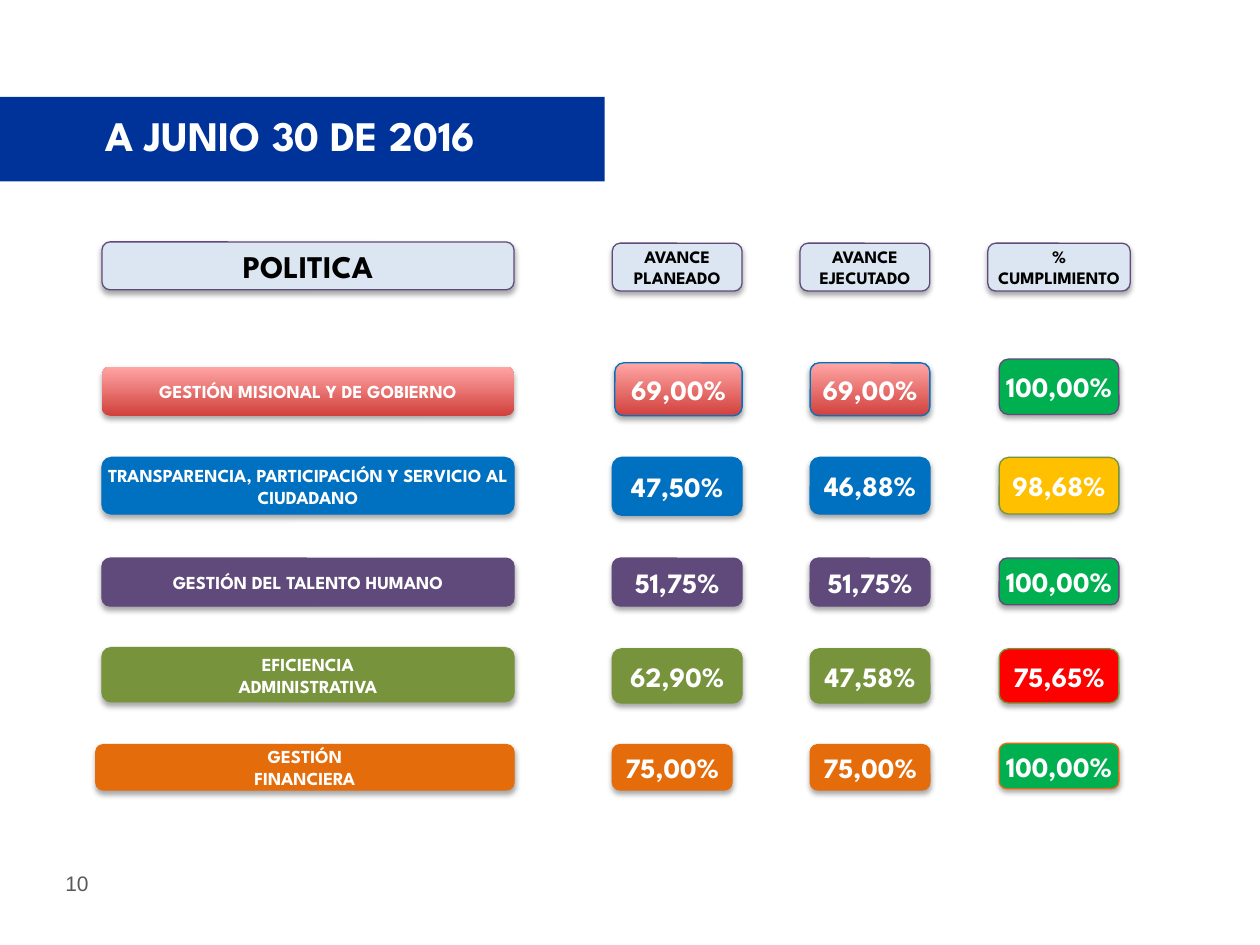
from lxml import etree
from pptx import Presentation
from pptx.dml.color import RGBColor
from pptx.enum.shapes import MSO_SHAPE as Shape
from pptx.enum.text import MSO_ANCHOR as Anchor, PP_ALIGN as Align
from pptx.oxml import parse_xml
from pptx.util import Inches, Pt

HEADING_FONT = "League Spartan"
WHITE, BLACK = "FFFFFF", "000000"
BLUE, PURPLE, GREEN, ORANGE = "0070C0", "604A7B", "77933C", "E46C0A"
RED_GRADIENT = ("D1403C", "FFA6A5")
ON_TARGET, NEAR_TARGET, BELOW_TARGET = "00B050", "FFC000", "FF0000"

SHADOW = """<a:effectLst xmlns:a="http://schemas.openxmlformats.org/drawingml/2006/main">
  <a:outerShdw blurRad="40000" dist="23000" dir="5400000" rotWithShape="0">
    <a:srgbClr val="000000"><a:alpha val="35000"/></a:srgbClr>
  </a:outerShdw>
</a:effectLst>"""

# Left and width of each column
POLICY, PLANNED, EXECUTED, COMPLIANCE = (0.81, 3.27), (4.86, 1.03), (6.43, 0.95), (7.93, 0.95)

HEADERS = [
    ("POLITICA", (0.81, 1.92, 3.27, 0.38), 18),
    ("AVANCE PLANEADO", (4.86, 1.93, 1.03, 0.38), 10),
    ("AVANCE EJECUTADO", (6.35, 1.93, 1.03, 0.38), 10),
    ("% CUMPLIMIENTO", (7.84, 1.93, 1.13, 0.38), 10),
]

# Policy lines, fill, status fill, (policy, planned, executed, compliance) outlines,
# values, and (left, top, width, height) of the four cells
ROWS = [
    (["GESTIÓN MISIONAL Y DE GOBIERNO"], RED_GRADIENT, ON_TARGET,
     (None, BLUE, BLUE, PURPLE), ("69,00%", "69,00%", "100,00%"),
     ((2.91, 0.39), (2.88, 0.42), (2.88, 0.42), (2.85, 0.44)), {1: (4.88, 1.01)}),
    (["TRANSPARENCIA, PARTICIPACIÓN Y SERVICIO AL CIUDADANO"], BLUE, NEAR_TARGET,
     (BLUE, BLUE, BLUE, GREEN), ("47,50%", "46,88%", "98,68%"),
     ((3.63, 0.45), (3.63, 0.46), (3.63, 0.45), (3.63, 0.45)), {}),
    (["GESTIÓN DEL TALENTO HUMANO"], PURPLE, ON_TARGET,
     (PURPLE,) * 4, ("51,75%", "51,75%", "100,00%"),
     ((4.43, 0.38), (4.43, 0.38), (4.43, 0.38), (4.43, 0.37)), {}),
    (["EFICIENCIA", "ADMINISTRATIVA"], GREEN, BELOW_TARGET,
     (GREEN,) * 4, ("62,90%", "47,58%", "75,65%"),
     ((5.14, 0.43), (5.15, 0.43), (5.15, 0.43), (5.15, 0.43)), {}),
    (["GESTIÓN", "FINANCIERA"], ORANGE, ON_TARGET,
     (ORANGE,) * 4, ("75,00%", "75,00%", "100,00%"),
     ((5.91, 0.36), (5.91, 0.36), (5.91, 0.36), (5.90, 0.36)),
     {0: (0.76, 3.32), 1: (4.86, 0.95)}),
]


def color(hex_string):
    return RGBColor.from_string(hex_string)


def inches(box):
    return [Inches(length) for length in box]


def write(frame, lines, size, text_color, font=HEADING_FONT, bold=True, align=Align.CENTER):
    for index, line in enumerate(lines):
        paragraph = frame.paragraphs[0] if index == 0 else frame.add_paragraph()
        paragraph.alignment = align
        run = paragraph.add_run()
        run.text = line
        run.font.name, run.font.size, run.font.bold = font, Pt(size), bold
        run.font.color.rgb = color(text_color)


def set_margins(frame, margin=0):
    frame.margin_left = frame.margin_right = Inches(margin)
    frame.margin_top = frame.margin_bottom = Inches(margin)


def paint(fill, paint_color):
    """Fill with one colour, or with a (bottom, top) gradient."""
    if isinstance(paint_color, str):
        fill.solid()
        fill.fore_color.rgb = color(paint_color)
        return
    fill.gradient()
    fill.gradient_angle = 90
    for stop, position, stop_color in zip(fill.gradient_stops, (0, 1), paint_color):
        stop.position = position
        stop.color.rgb = color(stop_color)


def add_pill(slide, box, lines, size, fill, outline, text_color=WHITE):
    pill = slide.shapes.add_shape(Shape.ROUNDED_RECTANGLE, *inches(box))
    paint(pill.fill, fill)
    if outline:
        pill.line.color.rgb = color(outline)
        pill.line.width = Pt(0.75)
    else:
        pill.line.fill.background()
    pill._element.spPr.append(parse_xml(SHADOW))
    frame = pill.text_frame
    frame.word_wrap = True
    frame.vertical_anchor = Anchor.MIDDLE
    set_margins(frame)
    write(frame, lines, size, text_color)


def add_title_band(slide, box):
    left, top, width, height = box
    band = slide.shapes.add_shape(Shape.RECTANGLE, *inches(box))
    band.shadow.inherit = False
    paint(band.fill, "003399")
    band.line.fill.background()
    title = slide.shapes.title
    slide.shapes._spTree.append(title._element)  # bring the title in front of the band
    title.left, title.top, title.width, title.height = inches(
        (left + 0.25, top + 0.06, width - 0.69, height - 0.19))
    title.text_frame.vertical_anchor = Anchor.MIDDLE
    write(title.text_frame, ["A JUNIO 30 DE 2016"], 24, WHITE)


def add_headers(slide):
    for label, box, size in HEADERS:
        add_pill(slide, box, [label], size, "DCE6F2", PURPLE, BLACK)


def add_policy_row(slide, policy, fill, status, outlines, values, spans, moved):
    """Place one policy with its three percentages; moved overrides column extents."""
    texts = [policy] + [[value] for value in values]
    sizes = (10.5, 16, 16, 16)
    fills = (fill, fill, fill, status)
    for index, column in enumerate((POLICY, PLANNED, EXECUTED, COMPLIANCE)):
        left, width = moved.get(index, column)
        top, height = spans[index]
        add_pill(slide, (left, top, width, height), texts[index], sizes[index],
                 fills[index], outlines[index])


def add_page_number(slide, box):
    frame = slide.shapes.add_textbox(*inches(box)).text_frame
    frame.word_wrap = True
    write(frame, ["10"], 12, "595959", "Arial", False, Align.LEFT)


def main():
    presentation = Presentation()
    presentation.slide_width, presentation.slide_height = Inches(10), Inches(7.5)
    slide = presentation.slides.add_slide(presentation.slide_layouts[5])
    add_page_number(slide, (0.42, 6.86, 0.75, 0.3))
    add_title_band(slide, (0, 0.77, 4.8, 0.67))
    add_headers(slide)
    for row in ROWS:
        add_policy_row(slide, *row)
    presentation.save("out.pptx")


if __name__ == "__main__":
    main()
